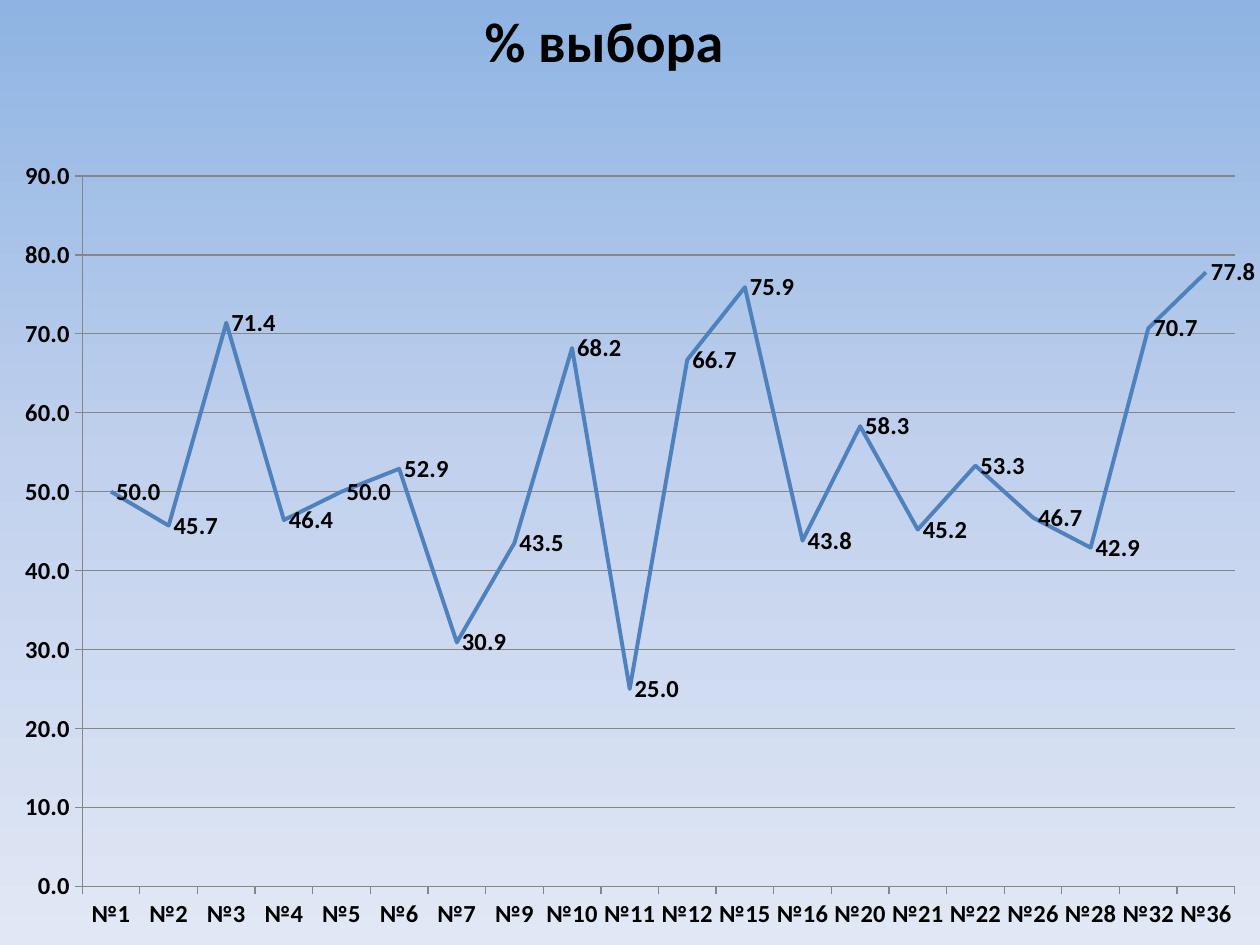
from dataclasses import dataclass

from lxml import etree
from pptx import Presentation
from pptx.chart.data import CategoryChartData
from pptx.dml.color import RGBColor
from pptx.enum.chart import XL_CHART_TYPE, XL_LABEL_POSITION, XL_MARKER_STYLE, XL_TICK_MARK
from pptx.enum.text import MSO_ANCHOR, MSO_AUTO_SIZE, PP_ALIGN
from pptx.oxml.ns import qn
from pptx.util import Inches, Pt

LINE = XL_CHART_TYPE.LINE
LABEL_RIGHT = XL_LABEL_POSITION.RIGHT
NO_MARKER = XL_MARKER_STYLE.NONE
TICK_OUTSIDE = XL_TICK_MARK.OUTSIDE
TOP = MSO_ANCHOR.TOP
GROW = MSO_AUTO_SIZE.SHAPE_TO_FIT_TEXT
CENTER = PP_ALIGN.CENTER
TITLE_ONLY = 5

# Share of choices for each numbered item
CHOICES = {
    "№1": 50, "№2": 45.7, "№3": 71.4, "№4": 46.4, "№5": 50,
    "№6": 52.9, "№7": 30.9, "№9": 43.5, "№10": 68.2, "№11": 25,
    "№12": 66.7, "№15": 75.9, "№16": 43.8, "№20": 58.3, "№21": 45.2,
    "№22": 53.3, "№26": 46.7, "№28": 42.9, "№32": 70.7, "№36": 77.8,
}


@dataclass(frozen=True)
class Theme:
    font: str = "Calibri"
    text: str = "000000"
    series: str = "4F81BD"
    grid: str = "868686"
    background: tuple = ((0, "8EB4E3"), (50, "C2D1ED"), (100, "E1E8F5"))
    title_size: int = 32
    label_size: int = 14


class SlideBuilder:
    def __init__(self, deck, theme):
        self.theme = theme
        self.page = deck.slides.add_slide(deck.slide_layouts[TITLE_ONLY])

    def format_font(self, font, size):
        values = {"name": self.theme.font, "size": Pt(size), "bold": True}
        for name, value in values.items():
            setattr(font, name, value)
        font.color.rgb = RGBColor.from_string(self.theme.text)

    def format_line(self, line, color, width):
        line.color.rgb = RGBColor.from_string(color)
        line.width = Pt(width)

    def background(self):
        fill = self.page.background.fill
        fill.gradient()
        fill.gradient_angle = 270
        # Replace the preset stops with the theme's three
        stops = self.page.background._cSld.find(".//" + qn("a:gsLst"))
        for stop in list(stops):
            stops.remove(stop)
        for percent, color in self.theme.background:
            stop = etree.SubElement(stops, qn("a:gs"), pos=str(percent * 1000))
            etree.SubElement(stop, qn("a:srgbClr"), val=color)

    def title(self, text, left, top, width, height):
        box = self.page.shapes.title
        places = {"left": left, "top": top, "width": width, "height": height}
        for name, value in places.items():
            setattr(box, name, Inches(value))
        frame = box.text_frame
        frame.text = text
        settings = {"word_wrap": False, "auto_size": GROW, "vertical_anchor": TOP}
        for name, value in settings.items():
            setattr(frame, name, value)
        para = frame.paragraphs[0]
        para.alignment = CENTER
        self.format_font(para.runs[0].font, self.theme.title_size)

    def line_chart(self, name, values, left, top, width, height):
        data = CategoryChartData(number_format="0.0")
        data.categories = list(values)
        data.add_series(name, list(values.values()))
        place = [Inches(length) for length in (left, top, width, height)]
        chart = self.page.shapes.add_chart(LINE, *place, data).chart
        chart.has_legend = False
        chart.has_title = False
        self.format_font(chart.font, self.theme.label_size)

        # Axes
        for axis in (chart.category_axis, chart.value_axis):
            axis.major_tick_mark = TICK_OUTSIDE
            self.format_font(axis.tick_labels.font, self.theme.label_size)
            self.format_line(axis.format.line, self.theme.grid, 0.75)
        scale = chart.value_axis
        for key, value in {"minimum_scale": 0, "maximum_scale": 90, "major_unit": 10}.items():
            setattr(scale, key, value)
        scale.tick_labels.number_format = "0.0"
        scale.tick_labels.number_format_is_linked = False
        scale.has_major_gridlines = True
        self.format_line(scale.major_gridlines.format.line, self.theme.grid, 0.75)

        # Series and its value labels
        plot = chart.plots[0]
        plot.vary_by_categories = False
        series = plot.series[0]
        series.smooth = False
        series.marker.style = NO_MARKER
        self.format_line(series.format.line, self.theme.series, 2.25)
        labels = series.data_labels
        settings = {"show_value": True, "number_format": "0.0",
                    "number_format_is_linked": False, "position": LABEL_RIGHT}
        for key, value in settings.items():
            setattr(labels, key, value)
        self.format_font(labels.font, self.theme.label_size)


def main():
    deck = Presentation()
    deck.slide_width, deck.slide_height = Inches(10), Inches(7.5)
    slide = SlideBuilder(deck, Theme())
    slide.background()
    slide.title("% выбора", 3.74, 0, 2.11, 0.64)
    slide.line_chart("Series 1", CHOICES, 0, 1.15, 10, 6.35)
    deck.save("out.pptx")


if __name__ == "__main__":
    main()
